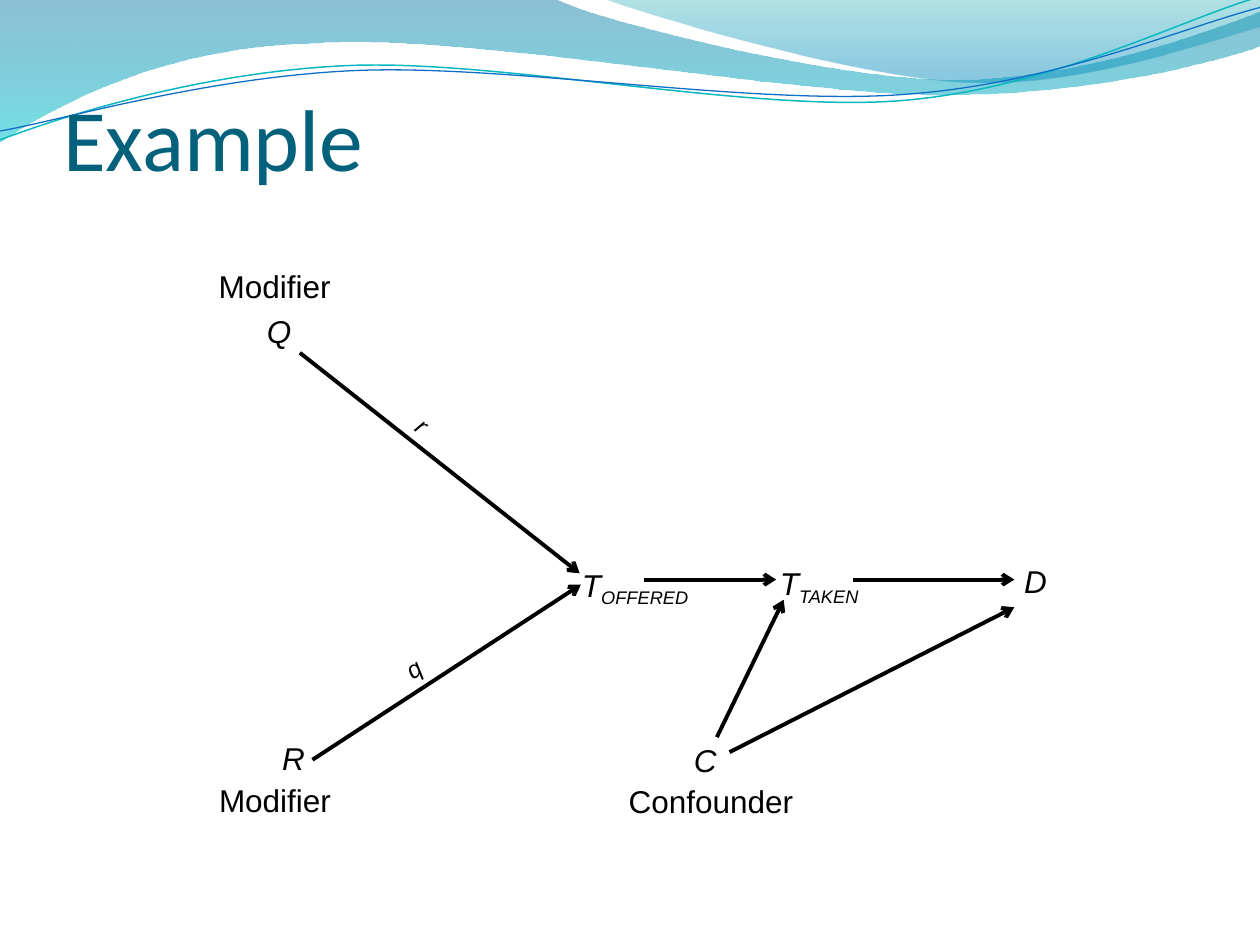
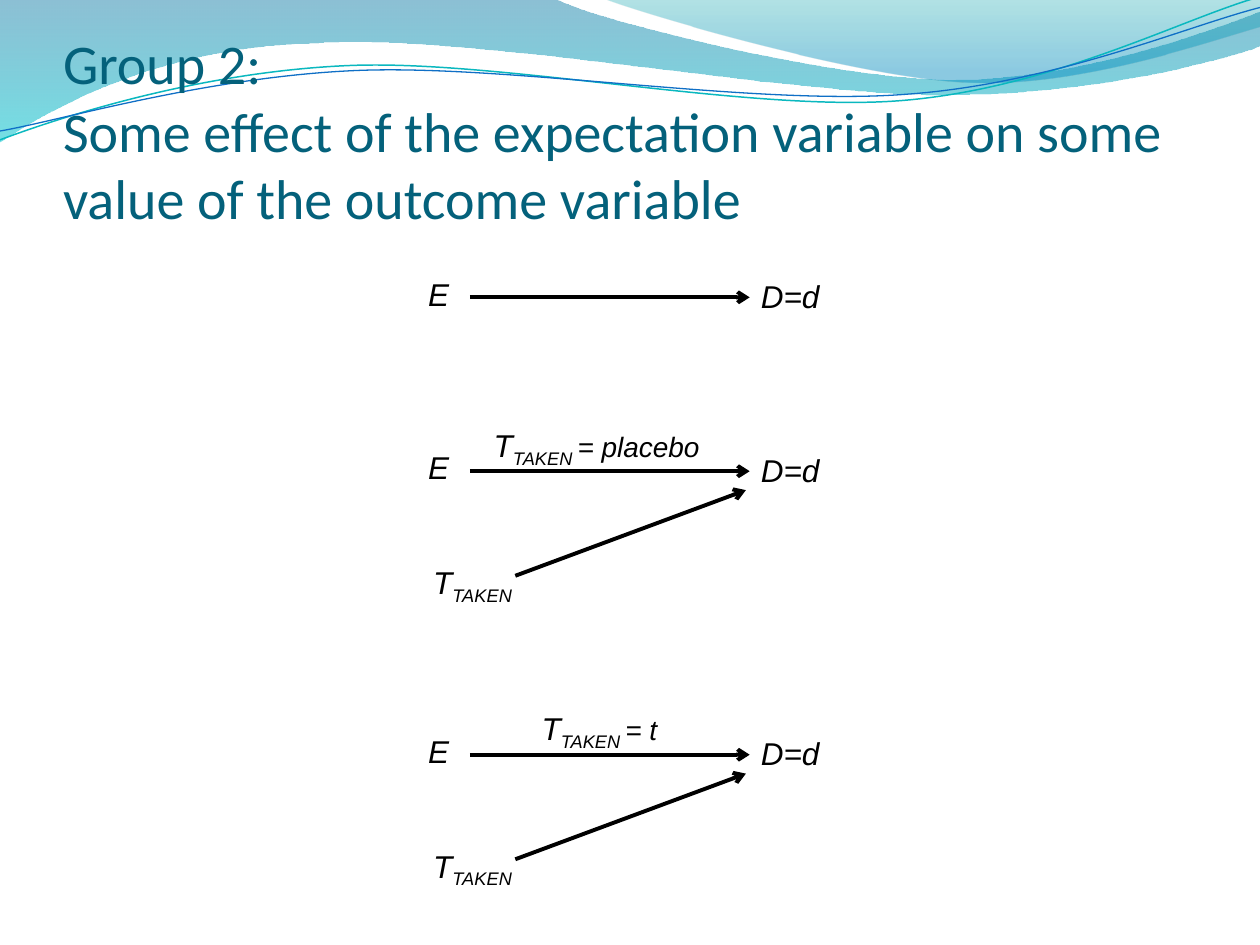
from math import cos, radians, sin

from lxml.etree import SubElement
from pptx import Presentation
from pptx.dml.color import RGBColor
from pptx.enum.shapes import MSO_CONNECTOR
from pptx.enum.text import MSO_ANCHOR, MSO_AUTO_SIZE, PP_ALIGN
from pptx.oxml.ns import qn
from pptx.util import Inches, Pt

BLACK, TITLE_COLOR = "000000", "04617B"
TITLE_FONT, LABEL_FONT = "Calibri", "Arial"
WAVE_ROTATION = 357.3

BANDS = [
    ((0, 0),
     [[(4.4, -0.01)],
      [(4.76, 0.17), (6.64, 0.63), (7.58, 0.63)],
      [(8.53, 0.63), (9.58, 0.26), (10, 0.09)],
      [(10.01, 0.36)],
      [(9.83, 0.44), (8.7, 0.76), (7.46, 0.75)],
      [(6.22, 0.75), (3.82, 0.28), (2.57, 0.34)],
      [(1.29, 0.36), (0.46, 0.83), (-0.01, 1.13)],
      [(0, 0)]],
     [(0, "0074A1", 45), (1, "00C6CF", 55)]),
    ((4.79, -0.01),
     [[(5.09, 0.11), (6.82, 0.62), (7.69, 0.65)],
      [(8.56, 0.69), (9.61, 0.32), (10, 0.21)],
      [(10, 0)],
      [(4.79, -0.01)]],
     [(0, "00A1A9", 30), (0.8, "008BBF", 45)]),
]
WAVES = [
    ((0, 1.11),
     [[(0.48, 0.93), (1.58, 0.57), (2.77, 0.52)],
      [(3.95, 0.47), (5.93, 0.89), (7.13, 0.8)],
      [(8.33, 0.71), (9.38, 0.15), (9.98, -0.02)]],
     (4.99, 0.58), "0AB8BF", 0.85),
    ((0, 1.04),
     [[(0.47, 0.96), (1.64, 0.61), (2.83, 0.56)],
      [(4.03, 0.51), (5.97, 0.84), (7.17, 0.75)],
      [(8.36, 0.67), (9.41, 0.21), (10, 0.06)]],
     (5, 0.59), "0F6FC6", 0.75),
]


def rgb(color):
    """Turn a hex string into a colour."""
    return RGBColor.from_string(color)


def turn(point, center, degrees):
    """Rotate a point clockwise about a center."""
    x, y = point[0] - center[0], point[1] - center[1]
    c, s = cos(radians(degrees)), sin(radians(degrees))
    return center[0] + x * c - y * s, center[1] + x * s + y * c


def add_outline(slide, start, segments, close):
    """Draw a freeform of straight and cubic segments without shadow."""
    points = [(Inches(x), Inches(y)) for segment in [[start], *segments] for x, y in segment]
    builder = slide.shapes.build_freeform(*points[0])
    builder.add_line_segments(points[1:], close=close)
    sp = builder.convert_to_shape()
    sp.shadow.inherit = False
    steps = iter(list(sp._element.iter(qn("a:lnTo"))))
    for segment in segments:
        nodes = [next(steps) for _ in segment]
        if len(nodes) == 3:
            curve = nodes[0].makeelement(qn("a:cubicBezTo"))
            nodes[0].addprevious(curve)
            for node in nodes:
                curve.append(node[0])
                node.getparent().remove(node)
    return sp


def add_band(slide, start, segments, stops):
    """Draw a translucent band with a vertical gradient."""
    sp = add_outline(slide, start, segments, True)
    sp.line.fill.background()
    sp.fill.gradient()
    sp.fill.gradient_angle = 270
    for stop, (position, color, _) in zip(sp.fill.gradient_stops, stops):
        stop.position = position
        stop.color.rgb = rgb(color)
    for node, (_, _, opacity) in zip(sp._element.iter(qn("a:srgbClr")), stops):
        SubElement(node, qn("a:alpha"), val=str(opacity * 1000))
    return sp


def add_wave(slide, start, segments, center, color, width):
    """Draw a thin wavy line, slightly rotated."""
    level = [[turn(point, center, -WAVE_ROTATION) for point in segment]
             for segment in [[start], *segments]]
    sp = add_outline(slide, level[0][0], level[1:], False)
    sp.rotation = WAVE_ROTATION
    sp.fill.background()
    sp.line.color.rgb = rgb(color)
    sp.line.width = Pt(width)
    return sp


def decorate_layout(slide):
    """Place the header bands and waves on the layout of the slide."""
    shapes = [add_band(slide, *band) for band in BANDS]
    waves = [add_wave(slide, *wave) for wave in WAVES]
    shapes.append(slide.shapes.add_group_shape(waves))
    tree = slide.slide_layout.shapes._spTree
    for index, sp in enumerate(shapes):
        tree.insert(2 + index, sp._element)


def set_title(slide, text, top, size):
    """Fill and format the title placeholder."""
    title = slide.shapes.title
    title.left, title.top = Inches(0.5), Inches(top)
    title.width, title.height = Inches(9.08), Inches(1.25)
    tf = title.text_frame
    tf.auto_size = MSO_AUTO_SIZE.NONE
    tf.vertical_anchor = MSO_ANCHOR.BOTTOM
    tf.margin_left = tf.margin_right = tf.margin_bottom = 0
    tf.margin_top = Inches(0.05)
    p = tf.paragraphs[0]
    p.text = text
    p.alignment = PP_ALIGN.LEFT
    p.font.name, p.font.size = TITLE_FONT, Pt(size)
    p.font.color.rgb = rgb(TITLE_COLOR)


def add_label(slide, left, top, width, text, sub="", tail="",
              size=18, height=0.4, rotation=0, italic=True, wrap=True):
    """Add a label with an optional subscript and a smaller tail."""
    sp = slide.shapes.add_textbox(Inches(left), Inches(top), Inches(width), Inches(height))
    sp.rotation = rotation
    tf = sp.text_frame
    tf.word_wrap = wrap
    tf.auto_size = MSO_AUTO_SIZE.SHAPE_TO_FIT_TEXT
    p = tf.paragraphs[0]
    p.font.name, p.font.size, p.font.italic = LABEL_FONT, Pt(size), italic
    p.font.color.rgb = rgb(BLACK)
    p.add_run().text = text
    if sub:
        r = p.add_run()
        r.text = sub
        r._r.get_or_add_rPr().set("baseline", "-25000")
    if tail:
        r = p.add_run()
        r.text = tail
        r.font.size = Pt(16)
    return sp


def add_role(slide, left, top, width, text, height=0.4):
    """Add an upright caption naming the role of a variable."""
    return add_label(slide, left, top, width, text, height=height, italic=False, wrap=False)


def add_arrow(slide, x1, y1, x2, y2):
    """Add a black arrow between two points."""
    line = slide.shapes.add_connector(
        MSO_CONNECTOR.STRAIGHT, Inches(x1), Inches(y1), Inches(x2), Inches(y2))
    line.line.color.rgb = rgb(BLACK)
    line.line.width = Pt(2.25)
    SubElement(line.line._get_or_add_ln(), qn("a:tailEnd"), type="arrow")
    SubElement(line._element.spPr, qn("a:effectLst"))


def build_example(slide):
    """Draw the causal diagram with modifiers and a confounder."""
    set_title(slide, "Example", 0.25, 50)
    for left, top, width, text, sub in [
        (8.03, 4.41, 0.48, "D", ""),
        (2.02, 2.43, 0.4, "Q", ""),
        (2.14, 5.82, 0.4, "R", ""),
        (5.41, 5.83, 0.4, "C", ""),
        (4.52, 4.44, 1.17, "T", "OFFERED"),
        (6.09, 4.43, 1.05, "T", "TAKEN"),
    ]:
        add_label(slide, left, top, width, text, sub, height=0.44 if text == "D" else 0.4)
    for left, top, width, text, rotation in [
        (3.13, 5.14, 0.31, "q", 326.9),
        (3.22, 3.21, 0.27, "r", 38.7),
    ]:
        add_label(slide, left, top, width, text, size=14, height=0.34,
                  rotation=rotation, wrap=False)
    for ends in [
        (2.38, 2.8, 4.6, 4.55),
        (2.48, 6.03, 4.61, 4.64),
        (5.11, 4.6, 6.16, 4.6),
        (6.77, 4.6, 8.05, 4.6),
        (5.69, 5.85, 6.22, 4.76),
        (5.79, 5.97, 8.05, 4.82),
    ]:
        add_arrow(slide, *ends)
    add_role(slide, 4.89, 6.16, 1.52, "Confounder")
    upper = add_role(slide, 1.63, 1.78, 1.1, "Modifier", height=0.71)
    upper.text_frame.margin_top = Inches(0.34)
    upper.text_frame.paragraphs[0].alignment = PP_ALIGN.CENTER
    add_role(slide, 1.64, 6.15, 1.1, "Modifier")


def add_effect(slide, top):
    """Draw the arrow from expectation to outcome."""
    add_label(slide, 3.3, top, 0.45, "E")
    add_label(slide, 5.94, top + 0.02, 0.73, "D=d", height=0.44)
    add_arrow(slide, 3.73, top + 0.23, 5.95, top + 0.23)


def add_modified_effect(slide, top, left, width, value):
    """Draw an effect that holds for one value of the treatment taken."""
    add_effect(slide, top)
    add_label(slide, left, top - 0.18, width, "T", "TAKEN ", value)
    add_label(slide, 3.34, top + 0.91, 0.9, "T", "TAKEN")
    add_arrow(slide, 4.09, top + 1.06, 5.92, top + 0.38)


def build_group_two(slide):
    """Draw the three diagrams of the second group."""
    set_title(slide, "Group 2: \vSome effect of the expectation variable "
              "on some value of the outcome variable", 0.58, 32)
    add_effect(slide, 2.13)
    add_modified_effect(slide, 3.51, 3.82, 1.92, "= placebo")
    add_modified_effect(slide, 5.76, 4.2, 1.33, "= t")


def main():
    """Build both slides and save the presentation."""
    prs = Presentation()
    prs.slide_width, prs.slide_height = Inches(10), Inches(7.5)
    layout = prs.slide_layouts[5]
    example, group_two = (prs.slides.add_slide(layout) for _ in range(2))
    decorate_layout(example)
    build_example(example)
    build_group_two(group_two)
    prs.save("out.pptx")


if __name__ == "__main__":
    main()
